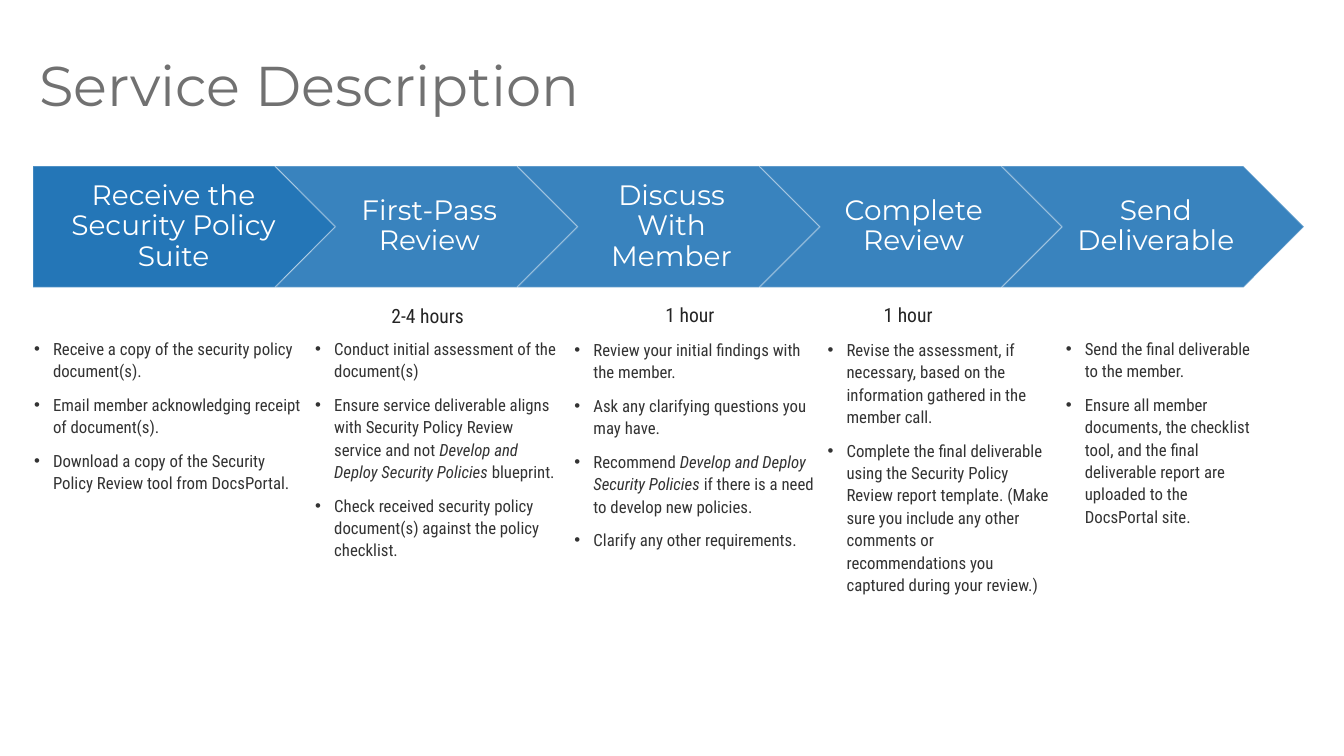
from pptx import Presentation
from pptx.dml.color import RGBColor
from pptx.enum.shapes import MSO_SHAPE
from pptx.enum.text import MSO_ANCHOR, MSO_AUTO_SIZE, PP_ALIGN
from pptx.oxml.ns import qn
from pptx.util import Pt
from lxml.etree import SubElement

# Content
TITLE = "Service Description"
STEPS = ["Receive the Security Policy Suite", "First-Pass Review",
         "Discuss With Member", "Complete Review", "Send Deliverable"]
DURATIONS = [("2-4 hours", 377, 301), ("1 hour", 639, 300), ("1 hour", 857, 300)]
BLUEPRINT = "Develop and Deploy Security Policies "
# Each column: left, top, width, height, bullets; a tuple is one bullet in several runs
COLUMNS = [
    (33, 336, 269, 280, [
        "Receive a copy of the security policy document(s).",
        "Email member acknowledging receipt of document(s).",
        "Download a copy of the Security Policy Review tool from DocsPortal."]),
    (314, 336, 247, 328, [
        "Conduct initial assessment of the document(s)",
        ("Ensure service deliverable aligns with Security Policy Review service and not ",
         BLUEPRINT, "blueprint."),
        "Check received security policy document(s) against the policy checklist."]),
    (573, 337, 241, 348, [
        "Review your initial findings with the member.",
        "Ask any clarifying questions you may have.",
        ("Recommend ", BLUEPRINT, "if there is a need to develop new policies."),
        "Clarify any other requirements."]),
    (826, 337, 227, 306, [
        "Revise the assessment, if necessary, based on the information gathered "
        "in the member call.",
        "Complete the final deliverable using the Security Policy Review report template. "
        "(Make sure you include any other comments or recommendations you captured "
        "during your review.)"]),
    (1064, 336, 197, 280, [
        "Send the final deliverable to the member.",
        "Ensure all member documents, the checklist tool, and the final deliverable "
        "report are uploaded to the DocsPortal site."]),
]
COLORS = {"title": "717171", "step": "2476B7", "white": "FFFFFF",
          "body": "333333", "hours": "242424"}
HEAD_FONT, BODY_FONT = "Montserrat", "Roboto Condensed"
STEP_LEFT, STEP_TOP, STEP_W, STEP_H = 33, 166, 302, 121
STEP_PITCH = STEP_W - STEP_H // 2


def px(n):
    return round(n * 914400 / 100.7)


def rgb(name):
    return RGBColor.from_string(COLORS[name])


def place(s, left, top, width, height):
    s.left, s.top, s.width, s.height = px(left), px(top), px(width), px(height)


def setup(s, margins=(0, 0, 0, 0), anchor=MSO_ANCHOR.TOP, wrap=True):
    tf = s.text_frame
    tf.auto_size = MSO_AUTO_SIZE.NONE
    tf.word_wrap, tf.vertical_anchor = wrap, anchor
    tf.margin_left, tf.margin_top, tf.margin_right, tf.margin_bottom = map(px, margins)
    return tf


def add_run(p, text, font, size, color, italic=False):
    r = p.add_run()
    r.text = text
    r.font.name, r.font.size, r.font.italic = font, Pt(size), italic
    r.font.color.rgb = rgb(color)


def add_line(tf, text, font, size, color, align, spacing):
    p = tf.paragraphs[0]
    p.alignment, p.line_spacing = align, spacing
    add_run(p, text, font, size, color)


def set_alpha(fill_parent, percent):
    color = fill_parent.find(qn("a:solidFill")).find(qn("a:srgbClr"))
    SubElement(color, qn("a:alpha")).set("val", str(percent * 1000))


def fill_bullets(tf, bullets):
    for i, bullet in enumerate(bullets):
        p = tf.paragraphs[0] if i == 0 else tf.add_paragraph()
        p.alignment, p.line_spacing = PP_ALIGN.LEFT, Pt(16)
        p.space_before, p.space_after = Pt(8 if i else 0), Pt(0)
        pPr = p._p.get_or_add_pPr()
        pPr.set("marL", str(px(20)))
        pPr.set("indent", str(px(-19)))
        SubElement(pPr, qn("a:buFont")).set("typeface", "Arial")
        SubElement(pPr, qn("a:buChar")).set("char", "•")
        for text in (bullet,) if isinstance(bullet, str) else bullet:
            add_run(p, text, BODY_FONT, 12, "body", text == BLUEPRINT)


prs = Presentation()
prs.slide_width, prs.slide_height = px(1343), px(755)
slide = prs.slides.add_slide(prs.slide_layouts[1])
title, body = slide.placeholders[0], slide.placeholders[1]

# Title
place(title, 39, 58, 930, 125)
add_line(setup(title), TITLE, HEAD_FONT, 40, "title", PP_ALIGN.LEFT, 0.9)

# Process arrows, each tucked into the one before
for i, step in enumerate(STEPS):
    kind = MSO_SHAPE.CHEVRON if i else MSO_SHAPE.PENTAGON
    s = slide.shapes.add_shape(kind, px(STEP_LEFT + i * STEP_PITCH), px(STEP_TOP),
                               px(STEP_W), px(STEP_H))
    s.shadow.inherit = False
    s.fill.solid()
    s.fill.fore_color.rgb = rgb("step")
    s.line.color.rgb, s.line.width = rgb("white"), Pt(1)
    set_alpha(s.line._ln, 20)
    if i:
        set_alpha(s._element.spPr, 90)
    tf = setup(s, (9 if i else 12, 6, 3, 6), MSO_ANCHOR.MIDDLE)
    add_line(tf, step, HEAD_FONT, 20, "white", PP_ALIGN.CENTER, 0.9)

# Bullet columns, the first in the body placeholder
for i, (left, top, width, height, bullets) in enumerate(COLUMNS):
    s = slide.shapes.add_textbox(0, 0, 0, 0) if i else body
    place(s, left, top, width, height)
    fill_bullets(setup(s), bullets)

# Durations
for text, left, top in DURATIONS:
    s = slide.shapes.add_textbox(px(left), px(top), px(101), px(25))
    add_line(setup(s, wrap=False), text, BODY_FONT, 14, "hours", PP_ALIGN.CENTER, 1.1)

prs.save("out.pptx")
